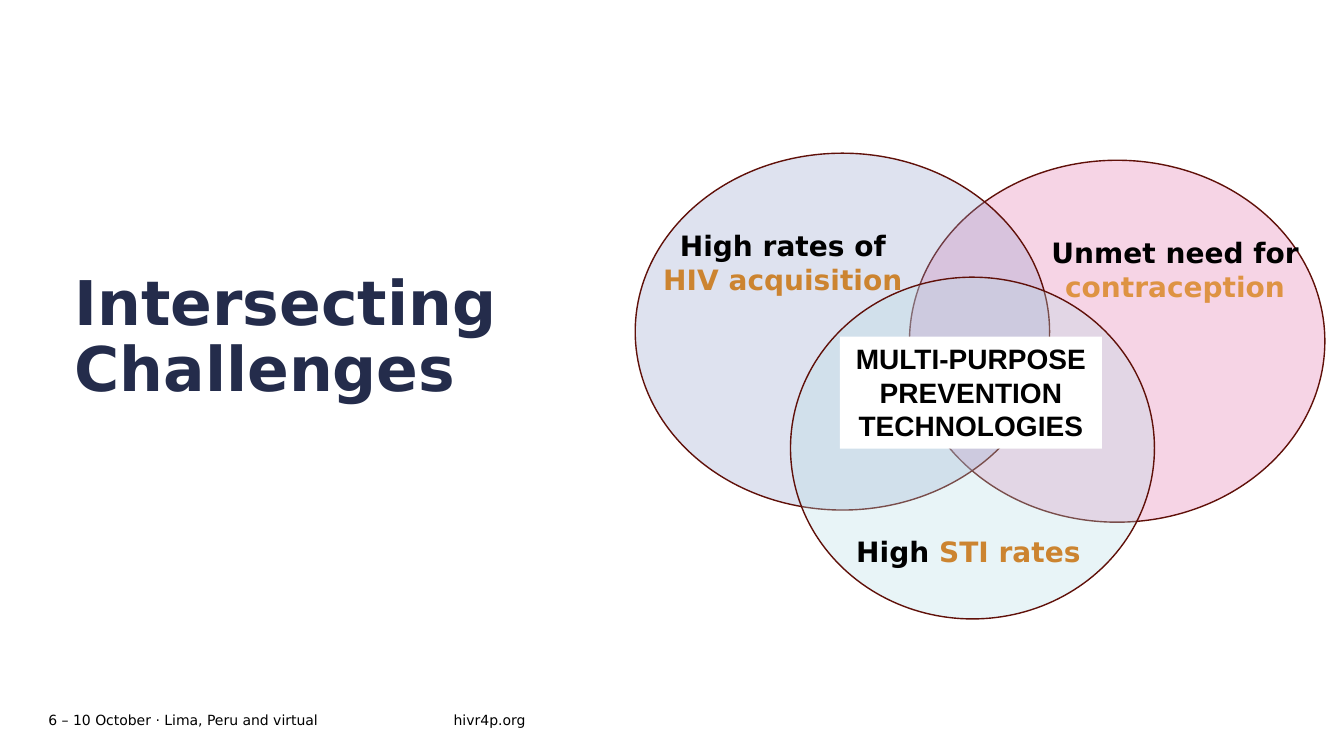
from pptx import Presentation
from pptx.dml.color import RGBColor
from pptx.enum.shapes import MSO_SHAPE
from pptx.enum.text import MSO_ANCHOR, PP_ALIGN
from pptx.oxml import parse_xml
from pptx.oxml.ns import nsdecls
from pptx.util import Inches, Pt

OVAL, RECTANGLE = MSO_SHAPE.OVAL, MSO_SHAPE.RECTANGLE
TOP, MIDDLE, BOTTOM = MSO_ANCHOR.TOP, MSO_ANCHOR.MIDDLE, MSO_ANCHOR.BOTTOM
LEFT, CENTER = PP_ALIGN.LEFT, PP_ALIGN.CENTER

BLACK = RGBColor(0x00, 0x00, 0x00)
WHITE = RGBColor(0xFF, 0xFF, 0xFF)
NAVY = RGBColor(0x24, 0x2C, 0x4B)
MAROON = RGBColor(0x60, 0x10, 0x09)
PINK = RGBColor(0xE2, 0x71, 0xA9)
LAVENDER = RGBColor(0x93, 0x9F, 0xCB)
AQUA = RGBColor(0xB5, 0xDD, 0xE5)
OCHRE = RGBColor(0xCC, 0x84, 0x30)
AMBER = RGBColor(0xDE, 0x93, 0x43)

FONT = "DejaVu Sans"
CIRCLE_OPACITY = 30

TITLE = ("Intersecting Challenges", (0.74, 2.46, 5.95, 1.56))
FOOTER = [
    ("6 – 10 October · Lima, Peru and virtual", (0.48, 7.02, 4.02, 0.24)),
    ("hivr4p.org", (4.5, 7.02, 1.93, 0.24)),
]
CHALLENGES = [
    {"circle": (9.02, 1.59, 4.12, 3.59), "tint": PINK},
    {"circle": (6.3, 1.52, 4.11, 3.54), "tint": LAVENDER,
     "label": (6.43, 2.22, 2.67, 0.77),
     "words": [("High rates of ", BLACK), ("HIV acquisition", OCHRE)]},
    {"circle": (7.84, 2.75, 3.61, 3.39), "tint": AQUA,
     "label": (8.35, 5.25, 2.51, 0.44),
     "words": [("High ", BLACK), ("STI rates", OCHRE)]},
    {"label": (10.32, 2.29, 2.67, 0.77),
     "words": [("Unmet need for ", BLACK), ("contraception", AMBER)]},
]
SOLUTION = ("MULTI-PURPOSE PREVENTION TECHNOLOGIES", (8.33, 3.34, 2.6, 1.11))


def inches(box):
    """Convert a box of inch values to lengths."""
    return [Inches(value) for value in box]


def write(frame, words, size, align=LEFT, anchor=TOP, bold=True, font=FONT,
          insets=(0.1, 0.05)):
    """Fill a text frame with one paragraph of coloured runs."""
    side, end = inches(insets)
    layout = {"word_wrap": True, "vertical_anchor": anchor,
              "margin_left": side, "margin_right": side,
              "margin_top": end, "margin_bottom": end}
    for name, value in layout.items():
        setattr(frame, name, value)
    paragraph = frame.paragraphs[0]
    paragraph.alignment = align
    for text, color in words:
        run = paragraph.add_run()
        run.text = text
        for name, value in {"name": font, "size": Pt(size), "bold": bold}.items():
            setattr(run.font, name, value)
        run.font.color.rgb = color
    return paragraph


def add_filled(slide, kind, box, color):
    """Add a shape with a plain fill and no shadow."""
    shape = slide.shapes.add_shape(kind, *inches(box))
    shape.shadow.inherit = False
    shape.fill.solid()
    shape.fill.fore_color.rgb = color
    return shape


def add_circle(slide, box, tint):
    """Add one translucent circle of the diagram."""
    circle = add_filled(slide, OVAL, box, tint)
    circle.line.color.rgb = MAROON
    circle.line.width = Pt(1)
    tint_element = circle.fill._xPr.solidFill[0]
    tint_element.append(parse_xml(
        f'<a:alpha {nsdecls("a")} val="{CIRCLE_OPACITY * 1000}"/>'))


def main():
    """Build the slide."""
    deck = Presentation()
    deck.slide_width, deck.slide_height = Inches(13.33), Inches(7.5)
    slide = deck.slides.add_slide(deck.slide_layouts[5])

    heading, heading_box = TITLE
    title = slide.shapes.title
    title.left, title.top, title.width, title.height = inches(heading_box)
    write(title.text_frame, [(heading, NAVY)], 44, anchor=BOTTOM,
          insets=(0, 0)).line_spacing = 0.9

    for text, box in FOOTER:
        note = slide.shapes.add_textbox(*inches(box))
        write(note.text_frame, [(text, BLACK)], 10, anchor=MIDDLE, bold=False,
              insets=(0, 0))

    for challenge in CHALLENGES:
        if "circle" in challenge:
            add_circle(slide, challenge["circle"], challenge["tint"])
        if "label" in challenge:
            label = slide.shapes.add_textbox(*inches(challenge["label"]))
            write(label.text_frame, challenge["words"], 20, CENTER)

    solution, solution_box = SOLUTION
    center = add_filled(slide, RECTANGLE, solution_box, WHITE)
    center.line.fill.background()
    write(center.text_frame, [(solution, BLACK)], 20, CENTER, font="Arial")

    deck.save("out.pptx")


if __name__ == "__main__":
    main()
